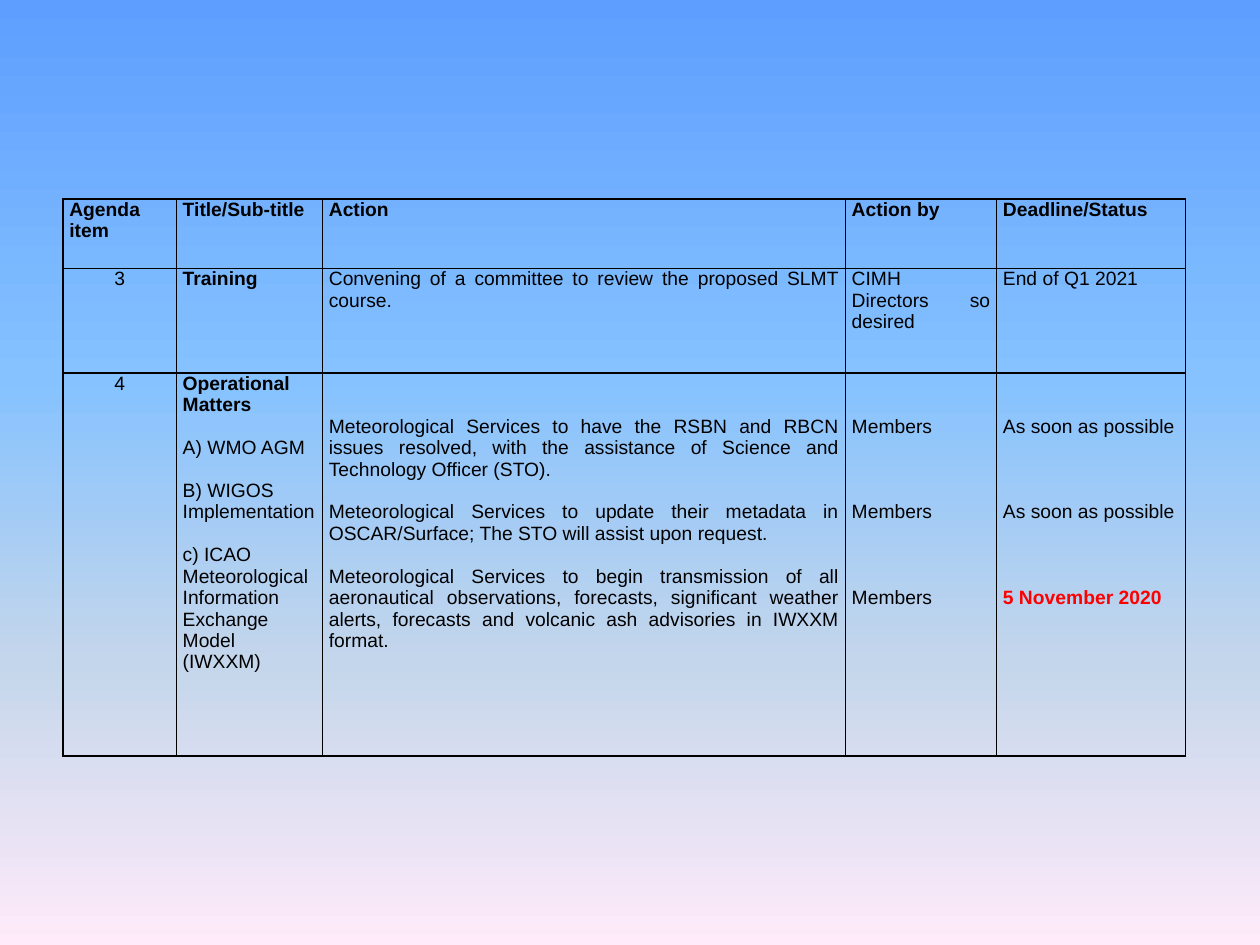
"""Build a slide with the table of agenda actions, owners and deadlines."""
from dataclasses import dataclass

from lxml.etree import SubElement
from pptx import Presentation
from pptx.dml.color import RGBColor
from pptx.enum.text import PP_ALIGN
from pptx.oxml import parse_xml
from pptx.oxml.ns import nsdecls, qn
from pptx.util import Inches, Pt

COLORS = {"text": "000000", "border": "000000", "urgent": "FF0000"}
BACKGROUND_STOPS = [(0, "5E9EFF"), (40, "85C2FF"), (70, "C4D6EB"), (100, "FFEBFA")]
COLUMN_WIDTHS = [0.9, 1.16, 4.15, 1.2, 1.5]
ROW_HEIGHTS = [0.55, 0.83, 3.04]
LINE_POINTS = 12.25


@dataclass
class Entry:
    """One paragraph of a cell, with the number of lines left open above it."""
    text: str
    bold: bool = False
    color: str = "text"
    align: PP_ALIGN = PP_ALIGN.JUSTIFY
    gap: int = 0


def heading(text):
    """Return a bold entry."""
    return Entry(text, bold=True)


def number(text):
    """Return a centred entry."""
    return Entry(text, align=PP_ALIGN.CENTER)


def subtitle(text, align=PP_ALIGN.LEFT):
    """Return an entry one line below the previous one."""
    return Entry(text, align=align, gap=1)


HEADER = ["Agenda item", "Title/Sub-title", "Action", "Action by", "Deadline/Status"]
ROWS = [
    [[heading(text)] for text in HEADER],
    [
        [number("3")],
        [heading("Training")],
        [Entry("Convening of a committee to review the proposed SLMT course.")],
        [Entry("CIMH"), Entry("Directors so desired")],
        [Entry("End of Q1 2021")],
    ],
    [
        [number("4")],
        [
            heading("Operational Matters"),
            subtitle("A) WMO AGM", PP_ALIGN.JUSTIFY),
            subtitle("B) WIGOS Implementation"),
            subtitle("c) ICAO Meteorological Information Exchange Model (IWXXM)"),
        ],
        [
            Entry("Meteorological Services to have the RSBN and RBCN issues resolved, "
                  "with the assistance of Science and Technology Officer (STO).", gap=2),
            Entry("Meteorological Services to update their metadata in OSCAR/Surface; "
                  "The STO will assist upon request.", gap=1),
            Entry("Meteorological Services to begin transmission of all aeronautical "
                  "observations, forecasts, significant weather alerts, forecasts and "
                  "volcanic ash advisories in IWXXM format.", gap=1),
        ],
        [Entry("Members", gap=gap) for gap in (2, 3, 3)],
        [
            Entry("As soon as possible", gap=2),
            Entry("As soon as possible", gap=3),
            Entry("5 November 2020", bold=True, color="urgent", gap=3),
        ],
    ],
]


def set_background(slide):
    """Fill the slide background with a vertical gradient."""
    slide.background.fill.gradient()
    gradient = slide.element.find(".//" + qn("a:gradFill"))
    stops = "".join(
        f'<a:gs pos="{position * 1000}"><a:srgbClr val="{color}"/></a:gs>'
        for position, color in BACKGROUND_STOPS
    )
    gradient.getparent().replace(gradient, parse_xml(
        f'<a:gradFill {nsdecls("a")} rotWithShape="1"><a:gsLst>{stops}</a:gsLst>'
        '<a:lin ang="5400000" scaled="0"/></a:gradFill>'
    ))


def set_borders(cell):
    """Draw a thin line on all four sides of a cell."""
    properties = cell._tc.get_or_add_tcPr()
    for index, side in enumerate(("lnL", "lnR", "lnT", "lnB")):
        line = SubElement(properties, qn(f"a:{side}"), w=str(Pt(1)))
        fill = SubElement(line, qn("a:solidFill"))
        SubElement(fill, qn("a:srgbClr"), val=COLORS["border"])
        properties.insert(index, line)


def write_cell(cell, entries):
    """Format a cell and write its entries as paragraphs."""
    cell.fill.background()
    set_borders(cell)
    cell.margin_left = cell.margin_right = Inches(0.05)
    cell.margin_top = Pt(entries[0].gap * LINE_POINTS)
    cell.margin_bottom = 0
    frame = cell.text_frame
    for index, entry in enumerate(entries):
        paragraph = frame.add_paragraph() if index else frame.paragraphs[0]
        paragraph.alignment = entry.align
        if index and entry.gap:
            paragraph.space_before = Pt(entry.gap * LINE_POINTS)
        run = paragraph.add_run()
        run.text = entry.text
        run.font.name = "Arial"
        run.font.size = Pt(11)
        run.font.bold = entry.bold
        run.font.color.rgb = RGBColor.from_string(COLORS[entry.color])


def add_action_table(slide):
    """Add the table of actions."""
    table = slide.shapes.add_table(
        len(ROWS), len(COLUMN_WIDTHS), Inches(0.5), Inches(1.58),
        Inches(sum(COLUMN_WIDTHS)), Inches(sum(ROW_HEIGHTS)),
    ).table
    table.first_row = table.horz_banding = False
    for column, width in zip(table.columns, COLUMN_WIDTHS):
        column.width = Inches(width)
    for row, height, contents in zip(table.rows, ROW_HEIGHTS, ROWS):
        row.height = Inches(height)
        for cell, entries in zip(row.cells, contents):
            write_cell(cell, entries)
    table.cell(0, 0).margin_right = Inches(0.03)


def main():
    """Create and save the presentation."""
    presentation = Presentation()
    presentation.slide_width = Inches(10)
    presentation.slide_height = Inches(7.5)
    slide = presentation.slides.add_slide(presentation.slide_layouts[6])
    set_background(slide)
    add_action_table(slide)
    presentation.save("out.pptx")


if __name__ == "__main__":
    main()
